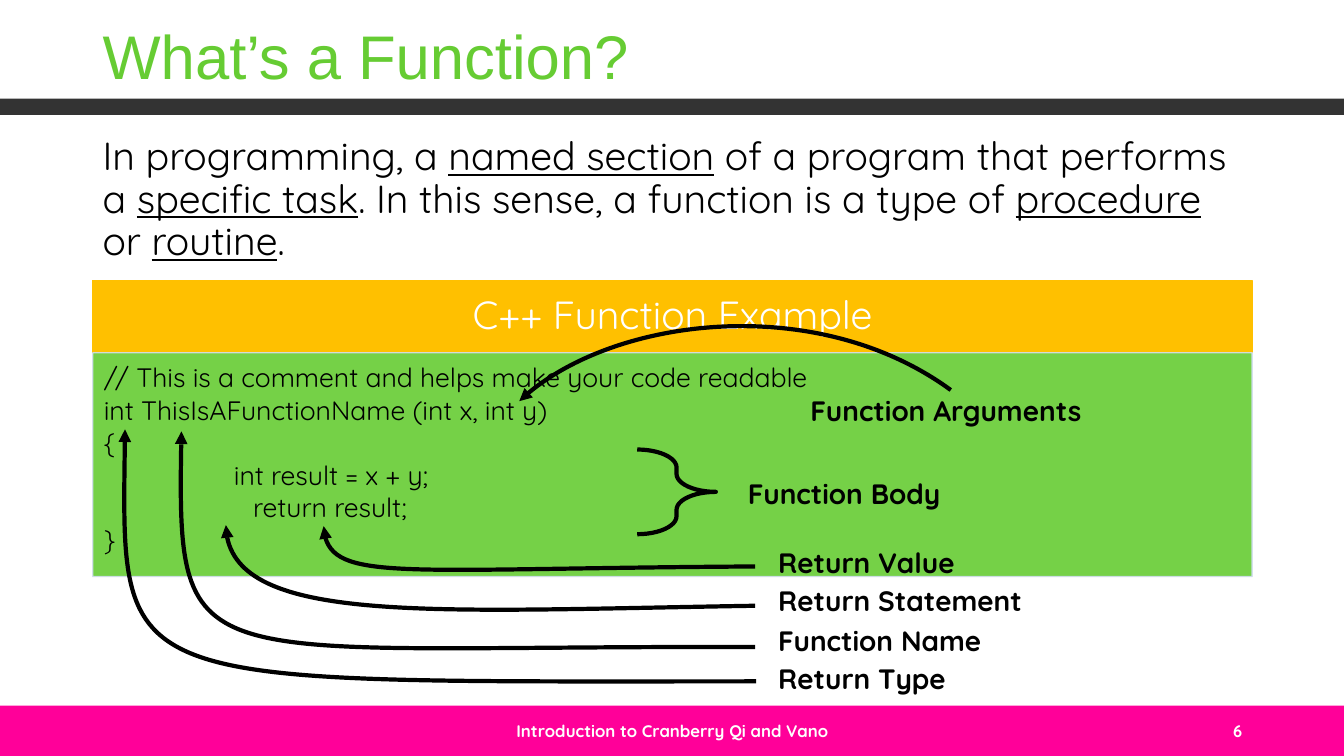
from lxml import etree
from pptx import Presentation
from pptx.dml.color import RGBColor
from pptx.enum.shapes import MSO_SHAPE as SHAPE
from pptx.enum.text import MSO_ANCHOR as ANCHOR, MSO_AUTO_SIZE as AUTO_SIZE, PP_ALIGN as ALIGN
from pptx.oxml.ns import qn
from pptx.util import Inches, Pt

BLACK, WHITE = "000000", "FFFFFF"
GREEN, AMBER = "66CC33", "FFC000"


def paint(color_format, hex_color, alpha=None):
    color_format.rgb = RGBColor.from_string(hex_color)
    if alpha:
        color = color_format._xFill.find(qn("a:srgbClr"))
        etree.SubElement(color, qn("a:alpha"), val=str(alpha * 1000))


def write(shape, lines, size, color, font="Quicksand", bold=False, align=ALIGN.LEFT,
          anchor=ANCHOR.TOP, spacing=None, after=None):
    """Each line is a list of (text, underlined) runs."""
    frame = shape.text_frame
    frame.word_wrap = True
    frame.vertical_anchor = anchor
    for number, runs in enumerate(lines):
        paragraph = frame.add_paragraph() if number else frame.paragraphs[0]
        for text, underlined in runs:
            run = paragraph.add_run()
            run.text = text
            if underlined:
                run.font.underline = True
        paragraph.alignment = align
        if spacing:
            paragraph.line_spacing = spacing
        if after:
            paragraph.space_after = Pt(after)
        paragraph.font.name = font
        paragraph.font.size = Pt(size)
        paragraph.font.bold = bold
        paint(paragraph.font.color, color)
    return frame


prs = Presentation()
prs.slide_width, prs.slide_height = Inches(13.33), Inches(7.5)
slide = prs.slides.add_slide(prs.slide_layouts[6])
shapes = slide.shapes

# Footer band, title rule and the two panels of the example
panels = []
for left, top, width, height, fill, fill_alpha, line in [
    (0, 7, 13.33, 0.5, "FF0099", None, None),
    (0, 0.98, 13.33, 0.16, "333333", None, None),
    (0.92, 2.78, 11.5, 0.72, AMBER, None, AMBER),
    (0.92, 3.5, 11.5, 2.22, GREEN, 90, "D2DEEF"),
]:
    panel = shapes.add_shape(SHAPE.RECTANGLE, Inches(left), Inches(top), Inches(width), Inches(height))
    panel.shadow.inherit = False
    panel.fill.solid()
    paint(panel.fill.fore_color, fill, fill_alpha)
    if line:
        panel.line.width = Pt(1)
        panel.line.fill.solid()
        paint(panel.line.color, line, fill_alpha)
    else:
        panel.line.fill.background()
    panels.append(panel)
example_header, code_panel = panels[2:]

# Title
title = shapes.add_textbox(Inches(0.92), 0, Inches(11.5), Inches(0.97))
write(title, [[("What’s a Function?", False)]], 44, GREEN, font="Arial", anchor=ANCHOR.BOTTOM, spacing=0.9)

# Definition
definition = shapes.add_textbox(Inches(0.92), Inches(1.31), Inches(11.5), Inches(1.42))
write(definition, [[
    ("In programming, a ", False), ("named section", True),
    (" of a program that performs a ", False), ("specific task", True),
    (". In this sense, a function is a type of ", False), ("procedure", True),
    (" or ", False), ("routine", True), (".", False),
]], 28, BLACK, spacing=0.9)

# Footer text and slide number
for left, width, text, align in [
    (4.42, 4.5, "Introduction to Cranberry Qi and Vano", ALIGN.CENTER),
    (9.42, 3, "6", ALIGN.RIGHT),
]:
    footer = shapes.add_textbox(Inches(left), Inches(7.05), Inches(width), Inches(0.4))
    write(footer, [[(text, False)]], 12, WHITE, bold=True, align=align, anchor=ANCHOR.MIDDLE)

# Example header and code
write(example_header, [[("C++ Function Example", False)]], 28, WHITE,
      align=ALIGN.CENTER, anchor=ANCHOR.MIDDLE, spacing=0.9)

code = [
    (0, "// This is a comment and helps make your code readable"),
    (0, "int ThisIsAFunctionName (int x, int y)"),
    (0, "{"),
    (1, "\t\tint result = x + y;"),
    (2, "\t\treturn result;"),
    (0, "}"),
]
code_frame = write(code_panel, [[(text, False)] for _, text in code], 19, BLACK, spacing=0.9, after=2.6)
code_frame.margin_left, code_frame.margin_top = Inches(0.11), Inches(0.12)
code_frame.margin_right, code_frame.margin_bottom = Inches(0.15), Inches(0.17)
for paragraph, (level, _) in zip(code_frame.paragraphs, code):
    paragraph.level = level
    properties = paragraph._p.get_or_add_pPr()
    properties.set("marL", str(Inches(0.19 * (level + 1))))
    properties.set("indent", str(Inches(-0.19)))
    properties.set("defTabSz", str(Inches(0.91)))

# Brace around the function body
brace = shapes.add_shape(SHAPE.RIGHT_BRACE, Inches(6.32), Inches(4.46), Inches(0.78), Inches(0.84))
brace.adjustments[0] = 0.229
brace.shadow.inherit = False
brace.fill.background()
brace.line.width = Pt(3)
paint(brace.line.color, BLACK)

# Labels, each with its curved arrow: left, top, right, bottom and control points (tip first)
for label, left, top, width, bounds, curve in [
    ("Function Body", 7.32, 4.67, 3.89, None, None),
    ("Return Statement", 7.62, 5.74, 3.89, (2.24, 5.21, 7.49, 6.05),
     [(2.24, 5.21), (2.25, 6.21), (4.35, 6.06), (7.49, 6.01)]),
    ("Return Value", 7.62, 5.36, 3.89, (3.21, 5.22, 7.49, 5.66),
     [(3.21, 5.22), (3.22, 5.79), (4.07, 5.64), (7.49, 5.62)]),
    ("Function Name", 7.62, 6.13, 3.89, (1.79, 4.28, 7.49, 6.44),
     [(1.8, 4.28), (1.75, 6.8), (1.89, 6.4), (7.49, 6.42)]),
    ("Function Arguments", 7.94, 3.85, 3.25, (5.15, 3.25, 9.43, 3.98),
     [(5.15, 3.98), (6.02, 3.15), (8.12, 2.91), (9.43, 3.87)]),
    ("Return Type", 7.62, 6.51, 3.89, (1.24, 4.26, 7.5, 6.76),
     [(1.24, 4.26), (1.21, 6.88), (1.09, 6.76), (7.5, 6.76)]),
]:
    if curve:
        x_min, y_min, x_max, y_max = map(Inches, bounds)
        builder = shapes.build_freeform(x_min, y_min)
        builder.add_line_segments([(x_max, y_max)], close=False)
        arrow = builder.convert_to_shape()
        # Turn the straight segment into one Bézier segment
        outline = next(arrow._element.iter(qn("a:path")))
        for segment in list(outline):
            outline.remove(segment)
        for tag, points in (("a:moveTo", curve[:1]), ("a:cubicBezTo", curve[1:])):
            segment = etree.SubElement(outline, qn(tag))
            for x, y in points:
                etree.SubElement(segment, qn("a:pt"), x=str(Inches(x) - x_min), y=str(Inches(y) - y_min))
        arrow.shadow.inherit = False
        arrow.fill.background()
        arrow.line.width = Pt(3)
        paint(arrow.line.color, BLACK)
        etree.SubElement(arrow.line._get_or_add_ln(), qn("a:headEnd"), type="triangle")
    label_box = shapes.add_textbox(Inches(left), Inches(top), Inches(width), Inches(0.44))
    label_frame = write(label_box, [[(label, False)]], 20, BLACK, bold=True, anchor=ANCHOR.MIDDLE)
    label_frame.auto_size = AUTO_SIZE.SHAPE_TO_FIT_TEXT

prs.save("out.pptx")
